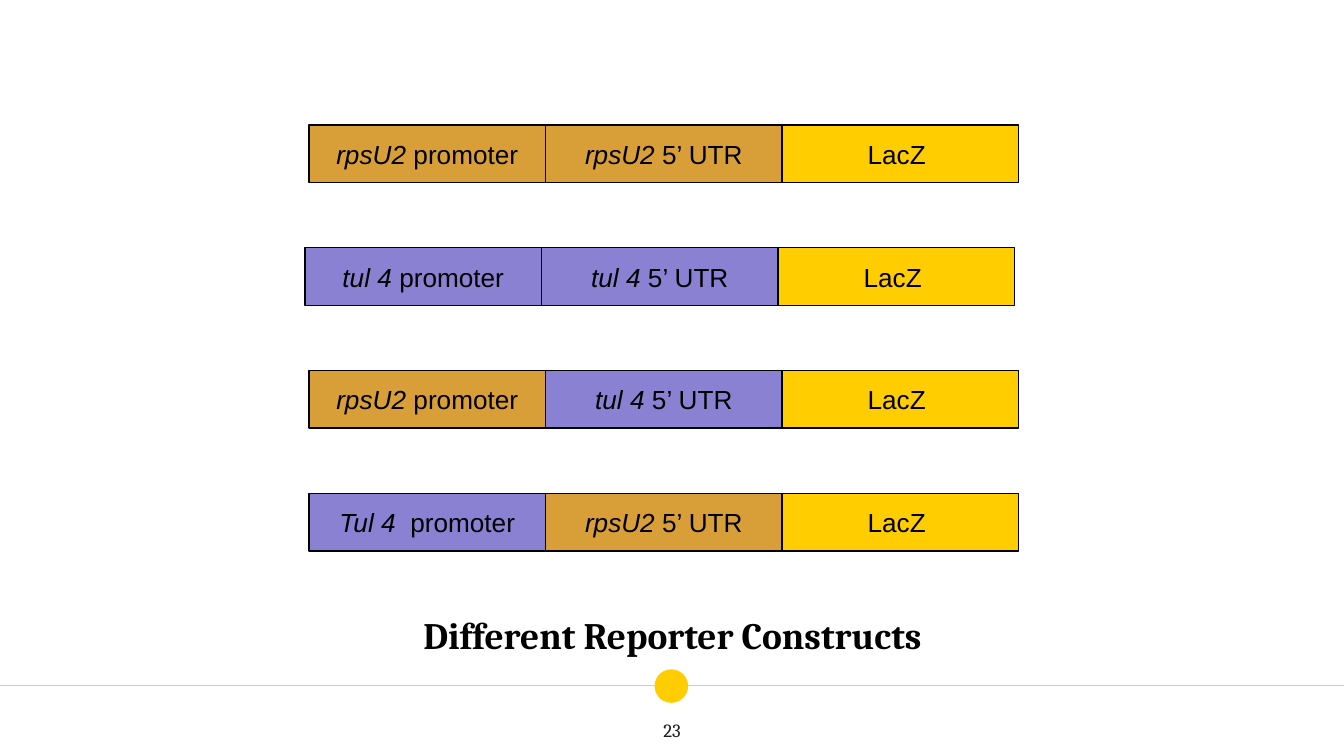
"""Build a slide showing four reporter gene constructs."""
from dataclasses import dataclass

from lxml import etree
from pptx import Presentation
from pptx import util as u
from pptx.dml.color import RGBColor
from pptx.enum import shapes, text
from pptx.oxml.ns import qn


@dataclass(frozen=True)
class Theme:
    rpsu2: RGBColor = RGBColor(0xD8, 0x9F, 0x39)
    tul4: RGBColor = RGBColor(0x8B, 0x81, 0xD2)
    accent: RGBColor = RGBColor(0xFF, 0xCD, 0x00)
    ink: RGBColor = RGBColor(0x00, 0x00, 0x00)
    number_ink: RGBColor = RGBColor(0x1D, 0x1D, 0x1B)
    rule: RGBColor = RGBColor(0xCC, 0xCC, 0xCC)
    heading_font: str = "Cambria"
    label_font: str = "Arial"
    title_size: u.Pt = u.Pt(20)
    label_size: u.Pt = u.Pt(14)
    number_size: u.Pt = u.Pt(10)
    line_width: u.Pt = u.Pt(0.75)


@dataclass(frozen=True)
class Segment:
    gene: str
    region: str
    fill: RGBColor


@dataclass(frozen=True)
class Construct:
    left: float
    promoter: Segment
    leader: Segment


THEME = Theme()
SEGMENT_WIDTH, SEGMENT_HEIGHT = 1.76, 0.43
FIRST_TOP, LAST_TOP = 0.93, 3.67

RPSU2_PROMOTER = Segment("rpsU2", " promoter", THEME.rpsu2)
RPSU2_LEADER = Segment("rpsU2", " 5’ UTR", THEME.rpsu2)
TUL4_PROMOTER = Segment("tul 4 ", "promoter", THEME.tul4)
TUL4_LEADER = Segment("tul 4 ", "5’ UTR", THEME.tul4)
REPORTER = Segment("", "LacZ ", THEME.accent)

CONSTRUCTS = (
    Construct(2.3, RPSU2_PROMOTER, RPSU2_LEADER),
    Construct(2.27, TUL4_PROMOTER, TUL4_LEADER),
    Construct(2.3, RPSU2_PROMOTER, TUL4_LEADER),
    Construct(2.3, Segment("Tul 4  ", "promoter", THEME.tul4), RPSU2_LEADER),
)


def format_frame(frame, anchor, font_name: str, size: u.Pt, color: RGBColor) -> None:
    """Apply the shared margins, centring and font to a one-paragraph frame."""
    frame.word_wrap = True
    frame.auto_size = text.MSO_AUTO_SIZE.NONE
    frame.vertical_anchor = anchor
    frame.margin_left = frame.margin_right = u.Inches(0.1)
    frame.margin_top = frame.margin_bottom = u.Inches(0.1)
    paragraph = frame.paragraphs[0]
    paragraph.alignment = text.PP_ALIGN.CENTER
    paragraph.font.name = font_name
    paragraph.font.size = size
    paragraph.font.color.rgb = color


def add_footer_rule(slide) -> None:
    """Draw the full-width rule and its central dot."""
    rule = slide.shapes.add_connector(
        shapes.MSO_CONNECTOR.STRAIGHT,
        u.Inches(-0.01), u.Inches(5.1), u.Inches(10.01), u.Inches(5.1))
    rule.line.color.rgb = THEME.rule
    rule.line.width = THEME.line_width
    etree.SubElement(rule._element.spPr, qn("a:effectLst"))
    dot = slide.shapes.add_shape(
        shapes.MSO_SHAPE.OVAL,
        u.Inches(4.87), u.Inches(4.98), u.Inches(0.25), u.Inches(0.25))
    dot.shadow.inherit = False
    dot.fill.solid()
    dot.fill.fore_color.rgb = THEME.accent
    dot.line.fill.background()


def add_title(slide, wording: str) -> None:
    """Place the title just above the footer rule."""
    title = slide.shapes.title
    title.left, title.top = u.Inches(2.18), u.Inches(4.42)
    title.width, title.height = u.Inches(5.65), u.Inches(0.57)
    title.text_frame.text = wording
    format_frame(title.text_frame, text.MSO_ANCHOR.BOTTOM,
                 THEME.heading_font, THEME.title_size, THEME.ink)
    paragraph = title.text_frame.paragraphs[0]
    paragraph.font.bold = True
    paragraph.space_before = u.Pt(3.6)


def add_page_number(slide, number: str) -> None:
    """Place the page number below the dot."""
    box = slide.shapes.add_textbox(
        u.Inches(4.7), u.Inches(5.23), u.Inches(0.6), u.Inches(0.4))
    box.text_frame.text = number
    format_frame(box.text_frame, text.MSO_ANCHOR.MIDDLE,
                 THEME.heading_font, THEME.number_size, THEME.number_ink)


def add_segment(slide, segment: Segment, left: float, top: float) -> None:
    """Draw one labelled segment with its gene name in italics."""
    shape = slide.shapes.add_shape(
        shapes.MSO_SHAPE.RECTANGLE, u.Inches(left), u.Inches(top),
        u.Inches(SEGMENT_WIDTH), u.Inches(SEGMENT_HEIGHT))
    shape.shadow.inherit = False
    shape.fill.solid()
    shape.fill.fore_color.rgb = segment.fill
    shape.line.color.rgb = THEME.ink
    shape.line.width = THEME.line_width
    paragraph = shape.text_frame.paragraphs[0]
    if segment.gene:
        gene = paragraph.add_run()
        gene.text = segment.gene
        gene.font.italic = True
    paragraph.add_run().text = segment.region
    format_frame(shape.text_frame, text.MSO_ANCHOR.MIDDLE,
                 THEME.label_font, THEME.label_size, THEME.ink)


def add_construct(slide, construct: Construct, top: float) -> None:
    """Draw promoter, leader and reporter side by side."""
    segments = (construct.promoter, construct.leader, REPORTER)
    for column, segment in enumerate(segments):
        add_segment(slide, segment, construct.left + column * SEGMENT_WIDTH, top)


def main() -> None:
    """Assemble and save the slide."""
    presentation = Presentation()
    presentation.slide_width = u.Inches(10)
    presentation.slide_height = u.Inches(10 * 9 / 16)
    slide = presentation.slides.add_slide(presentation.slide_layouts[5])
    add_footer_rule(slide)
    add_title(slide, "Different Reporter Constructs")
    add_page_number(slide, "23")
    pitch = (LAST_TOP - FIRST_TOP) / (len(CONSTRUCTS) - 1)
    for row, construct in enumerate(CONSTRUCTS):
        add_construct(slide, construct, FIRST_TOP + row * pitch)
    presentation.save("out.pptx")


if __name__ == "__main__":
    main()
